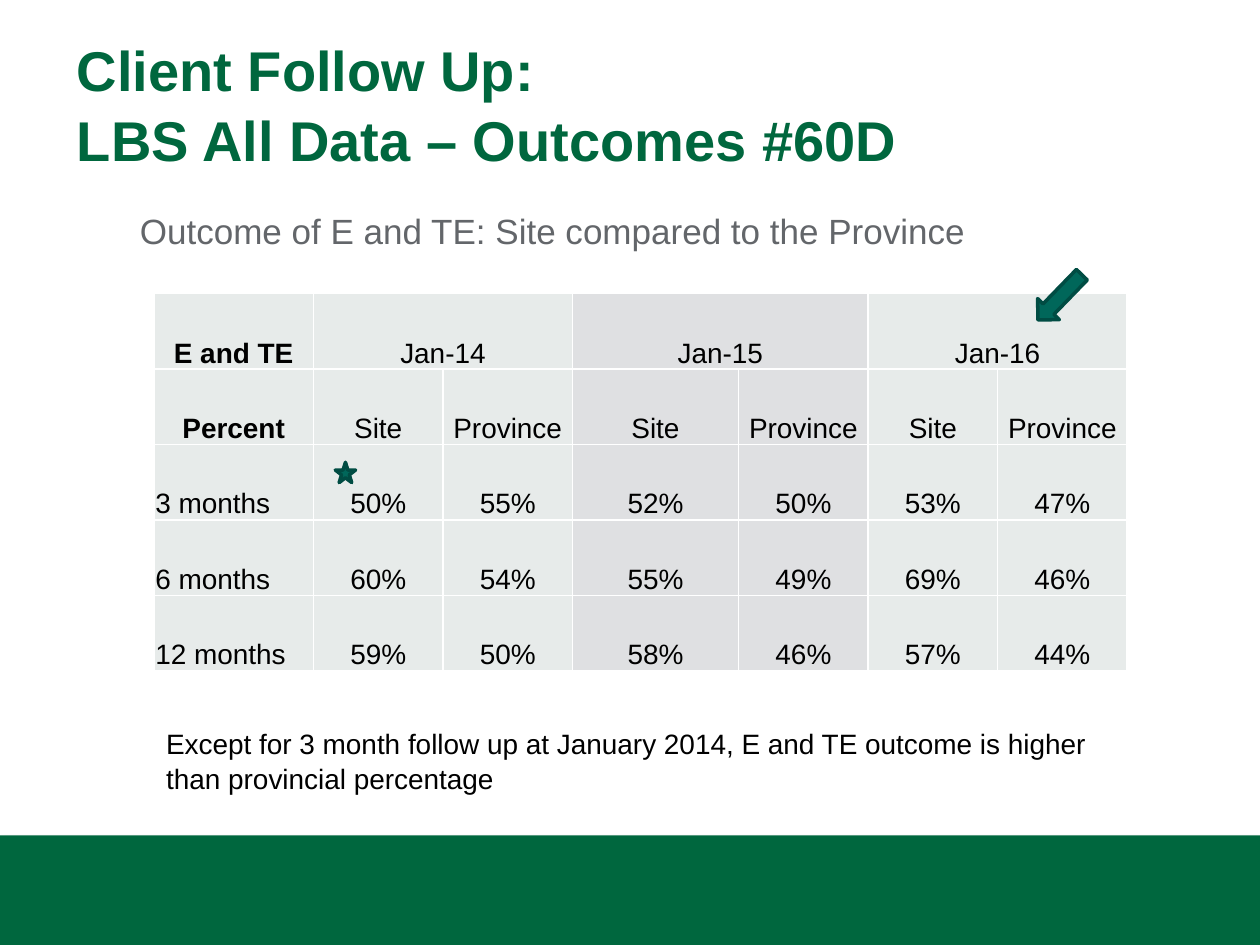
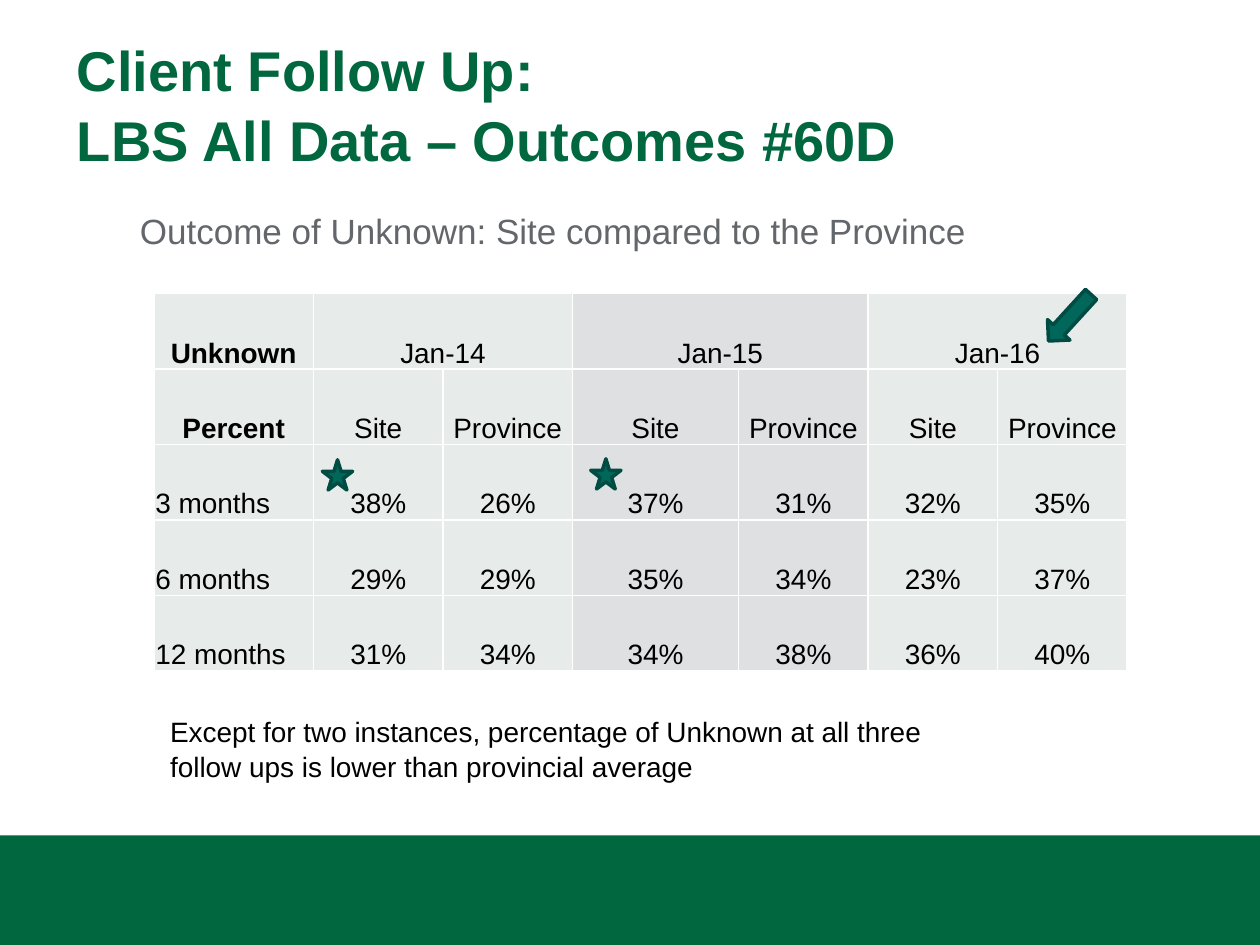
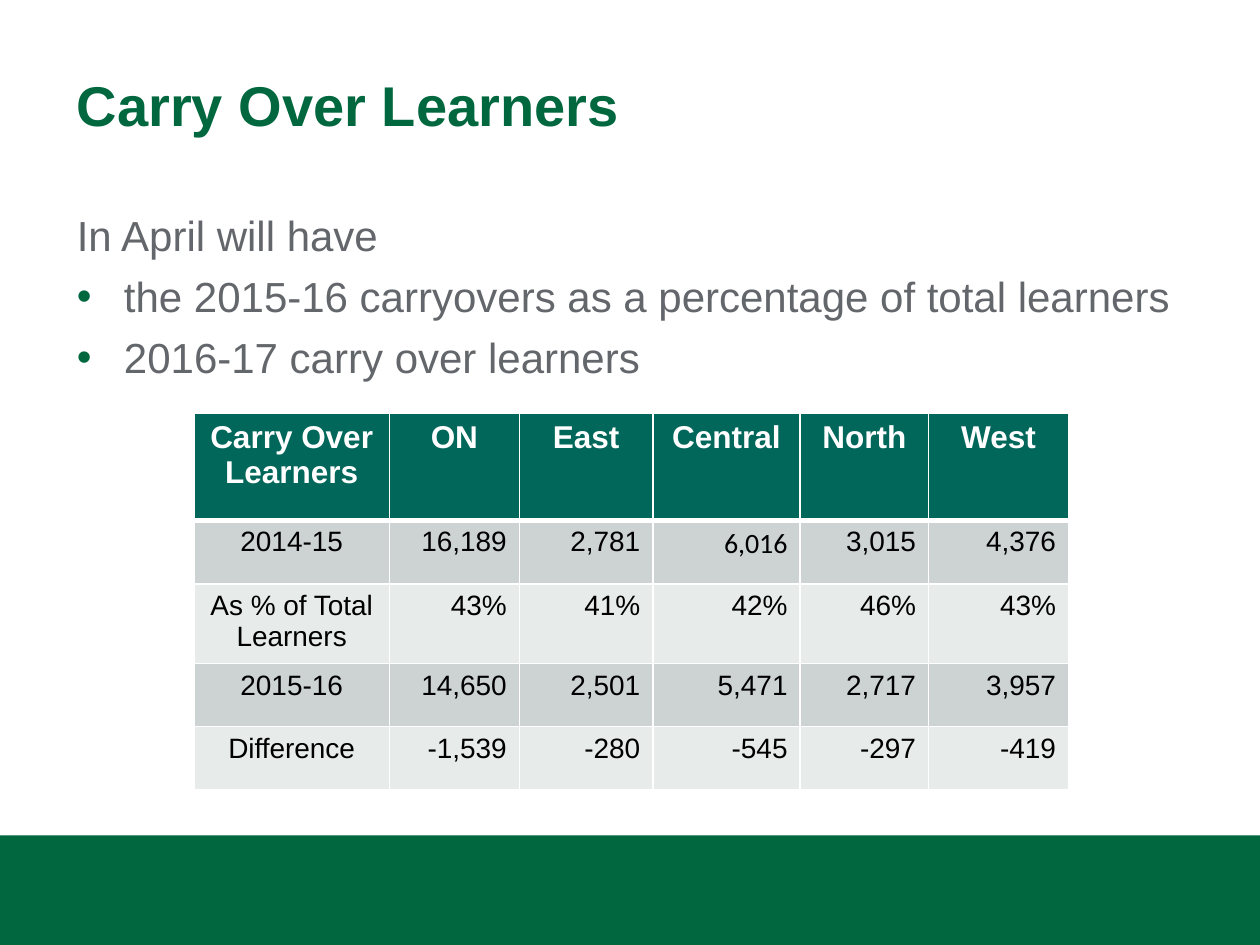
from dataclasses import dataclass

from lxml.etree import SubElement
from pptx import Presentation
from pptx.dml.color import RGBColor as Rgb
from pptx.enum.shapes import MSO_SHAPE as Shape
from pptx.enum.text import MSO_ANCHOR as Anchor, PP_ALIGN as Align
from pptx.oxml.ns import qn
from pptx.util import Cm, Pt


@dataclass(frozen=True)
class Theme:
    font: str = "Arial"
    alternate_font: str = "Calibri"
    green: str = "00673E"
    teal: str = "00675A"
    dark_teal: str = "004C43"
    gray: str = "63666A"
    black: str = "000000"
    white: str = "FFFFFF"
    pale: str = "E7EBEA"
    cool: str = "DFE0E2"
    medium: str = "CCD3D2"
    title: int = 32
    body: int = 24
    subtitle: int = 20
    header: int = 18
    small: int = 16


THEME = Theme()

# Content; places and sizes are in centimetres
OUTCOME_TITLE = ["Client Follow Up:", "LBS All Data – Outcomes #60D"]
DATES = ["Jan-14", "Jan-15", "Jan-16"]
PERIODS = ["3 months", "6 months", "12 months"]
OUTCOMES = [
    {
        "name": "E and TE",
        "percentages": [
            [50, 55, 52, 50, 53, 47],
            [60, 54, 55, 49, 69, 46],
            [59, 50, 58, 46, 57, 44],
        ],
        "note": "Except for 3 month follow up at January 2014, E and TE outcome "
                "is higher than provincial percentage",
        "note_box": (3.1, 14.5, 19.41, 1.63),
        "arrow": (20.73, 5.69, 134.1),
        "stars": [(6.76, 9.32, 0.41)],
    },
    {
        "name": "Unknown",
        "percentages": [
            [38, 26, 37, 31, 32, 35],
            [29, 29, 35, 34, 23, 37],
            [31, 34, 34, 38, 36, 40],
        ],
        "note": "Except for two instances, percentage of Unknown at all three "
                "follow ups is lower than provincial average",
        "note_box": (3.18, 14.25, 17.22, 1.63),
        "arrow": (20.93, 6.1, 132.4),
        "stars": [(6.5, 9.27, 0.61), (11.91, 9.25, 0.61)],
    },
]
CARRY_OVER_INTRO = "In April will have"
CARRY_OVER_BULLETS = [
    "the 2015-16 carryovers as a percentage of total learners",
    "2016-17 carry over learners",
]
CARRY_OVER_ROWS = [
    ["Carry Over Learners", "ON", "East", "Central", "North", "West"],
    ["2014-15", "16,189", "2,781", "6,016", "3,015", "4,376"],
    ["As % of Total Learners", "43%", "41%", "42%", "46%", "43%"],
    ["2015-16", "14,650", "2,501", "5,471", "2,717", "3,957"],
    ["Difference", "-1,539", "-280", "-545", "-297", "-419"],
]

# Layout
SLIDE_SIZE = (25.4, 19.05)
BAND_BOX = (0, 16.84, 25.4, 2.21)
TITLE_BOX = (1.3, 0.41, 22.81, 3.33)
BODY_BOX = (1.3, 4.06, 22.81, 12.09)
OUTCOME_ORIGIN = (3.1, 5.92)
OUTCOME_COLUMNS = [3.22, 2.61, 2.61, 3.35, 2.61, 2.61, 2.61]
OUTCOME_HEIGHTS = [1.52] * 5
CARRY_OVER_ORIGIN = (3.91, 8.33)
CARRY_OVER_COLUMNS = [3.94, 2.62, 2.69, 2.97, 2.59, 2.82]
CARRY_OVER_HEIGHTS = [2.16, 1.28, 1.22, 1.27, 1.27]
ARROW_SIZE = (1.27, 0.61)


def lengths(values):
    return [Cm(value) for value in values]


def color(value):
    return Rgb.from_string(value)


# Text
def add_run(paragraph, text, size, ink, bold=False, font=THEME.font):
    run = paragraph.add_run()
    run.text = text
    run.font.name = font
    run.font.size = Pt(size)
    run.font.bold = bold
    run.font.color.rgb = color(ink)


def add_text_box(slide, box, anchor=Anchor.TOP):
    frame = slide.shapes.add_textbox(*lengths(box)).text_frame
    frame.word_wrap = True
    frame.vertical_anchor = anchor
    frame.paragraphs[0].line_spacing = 1.04
    return frame


def set_indent(paragraph, margin, first=0):
    properties = paragraph._p.get_or_add_pPr()
    properties.set("marL", str(Cm(margin)))
    properties.set("indent", str(Cm(first)))
    return properties


def add_bullet(frame, text):
    paragraph = frame.add_paragraph()
    properties = set_indent(paragraph, 0.95, -0.95)
    bullet_color = SubElement(properties, qn("a:buClr"))
    SubElement(bullet_color, qn("a:srgbClr"), val=THEME.green)
    SubElement(properties, qn("a:buFont"), typeface=THEME.font)
    SubElement(properties, qn("a:buChar"), char="•")
    paragraph.line_spacing = 1.04
    paragraph.space_before = Pt(5)
    add_run(paragraph, text, THEME.body, THEME.gray)


# Shapes
def add_shape(slide, kind, box, fill, line=None):
    shape = slide.shapes.add_shape(kind, *lengths(box))
    shape.shadow.inherit = False
    shape.fill.solid()
    shape.fill.fore_color.rgb = color(fill)
    if line:
        shape.line.color.rgb = color(line)
        shape.line.width = Pt(2)
    else:
        shape.line.fill.background()
    return shape


def add_band(slide):
    band = add_shape(slide, Shape.RECTANGLE, BAND_BOX, THEME.green)
    effects = band._element.spPr.find(qn("a:effectLst"))
    shadow = SubElement(effects, qn("a:outerShdw"), blurRad=str(Pt(3.1)),
                        dist=str(Pt(1.8)), dir="5400000", rotWithShape="0")
    tint = SubElement(shadow, qn("a:srgbClr"), val=THEME.black)
    SubElement(tint, qn("a:alpha"), val="35000")


def add_slide(presentation, title_lines):
    slide = presentation.slides.add_slide(presentation.slide_layouts[6])
    add_band(slide)
    paragraph = add_text_box(slide, TITLE_BOX, Anchor.MIDDLE).paragraphs[0]
    for index, line in enumerate(title_lines):
        if index:
            paragraph.add_line_break()
        add_run(paragraph, line, THEME.title, THEME.green, bold=True)
    return slide


# Tables
def add_table(slide, origin, columns, heights):
    box = (*origin, sum(columns), sum(heights))
    table = slide.shapes.add_table(len(heights), len(columns), *lengths(box)).table
    for column, width in zip(table.columns, columns):
        column.width = Cm(width)
    for row, height in zip(table.rows, heights):
        row.height = Cm(height)
    return table


def style_cell(cell, fill, top=1, bottom=1):
    properties = cell._tc.get_or_add_tcPr()
    for side, width in (("L", 1), ("R", 1), ("T", top), ("B", bottom)):
        border = SubElement(properties, qn(f"a:ln{side}"), w=str(Pt(width)))
        paint = SubElement(border, qn("a:solidFill"))
        SubElement(paint, qn("a:srgbClr"), val=THEME.white)
    cell.fill.solid()
    cell.fill.fore_color.rgb = color(fill)


def add_outcome_table(slide, outcome):
    date_row = [outcome["name"]]
    for date in DATES:
        date_row += [date, ""]
    rows = [date_row, ["Percent"] + ["Site", "Province"] * len(DATES)]
    for period, values in zip(PERIODS, outcome["percentages"]):
        rows.append([period] + [f"{value}%" for value in values])

    table = add_table(slide, OUTCOME_ORIGIN, OUTCOME_COLUMNS, OUTCOME_HEIGHTS)
    for r, row in enumerate(rows):
        for c, text in enumerate(row):
            cell = table.cell(r, c)
            style_cell(cell, THEME.cool if c in (3, 4) else THEME.pale)
            cell.vertical_anchor = Anchor.BOTTOM
            cell.margin_left = cell.margin_right = cell.margin_top = Cm(0.03)
            cell.margin_bottom = 0
            if text:
                paragraph = cell.text_frame.paragraphs[0]
                is_period = c == 0 and r > 1
                paragraph.alignment = Align.LEFT if is_period else Align.CENTER
                add_run(paragraph, text, THEME.small, THEME.black,
                        bold=c == 0 and r < 2)
    for c in range(1, len(OUTCOME_COLUMNS), 2):
        table.cell(0, c).merge(table.cell(0, c + 1))


def add_carry_over_table(slide):
    table = add_table(slide, CARRY_OVER_ORIGIN, CARRY_OVER_COLUMNS,
                      CARRY_OVER_HEIGHTS)
    for r, row in enumerate(CARRY_OVER_ROWS):
        for c, text in enumerate(row):
            cell = table.cell(r, c)
            paragraph = cell.text_frame.paragraphs[0]
            paragraph.alignment = Align.RIGHT if r and c else Align.CENTER
            if r == 0:
                style_cell(cell, THEME.teal, bottom=3)
                add_run(paragraph, text, THEME.header, THEME.white, bold=True)
            else:
                style_cell(cell, THEME.medium if r % 2 else THEME.pale,
                           top=3 if r == 1 else 1)
                font = THEME.alternate_font if (r, c) == (1, 3) else THEME.font
                add_run(paragraph, text, THEME.small, THEME.black, font=font)


# Slides
def add_outcome_slide(presentation, outcome):
    slide = add_slide(presentation, OUTCOME_TITLE)
    subtitle = add_text_box(slide, BODY_BOX).paragraphs[0]
    set_indent(subtitle, 1.27)
    add_run(subtitle, f"Outcome of {outcome['name']}: Site compared to the Province",
            THEME.subtitle, THEME.gray)
    add_outcome_table(slide, outcome)
    note = add_text_box(slide, outcome["note_box"]).paragraphs[0]
    add_run(note, outcome["note"], THEME.small, THEME.black)

    left, top, angle = outcome["arrow"]
    arrow = add_shape(slide, Shape.RIGHT_ARROW, (left, top, *ARROW_SIZE),
                      THEME.teal, THEME.dark_teal)
    arrow.rotation = angle
    for left, top, size in outcome["stars"]:
        add_shape(slide, Shape.STAR_5_POINT, (left, top, size, size),
                  THEME.teal, THEME.dark_teal)


def add_carry_over_slide(presentation):
    slide = add_slide(presentation, ["Carry Over Learners"])
    body = add_text_box(slide, BODY_BOX)
    add_run(body.paragraphs[0], CARRY_OVER_INTRO, THEME.body, THEME.gray)
    for text in CARRY_OVER_BULLETS:
        add_bullet(body, text)
    add_carry_over_table(slide)


def main():
    presentation = Presentation()
    presentation.slide_width, presentation.slide_height = lengths(SLIDE_SIZE)
    for outcome in OUTCOMES:
        add_outcome_slide(presentation, outcome)
    add_carry_over_slide(presentation)
    presentation.save("out.pptx")


if __name__ == "__main__":
    main()
